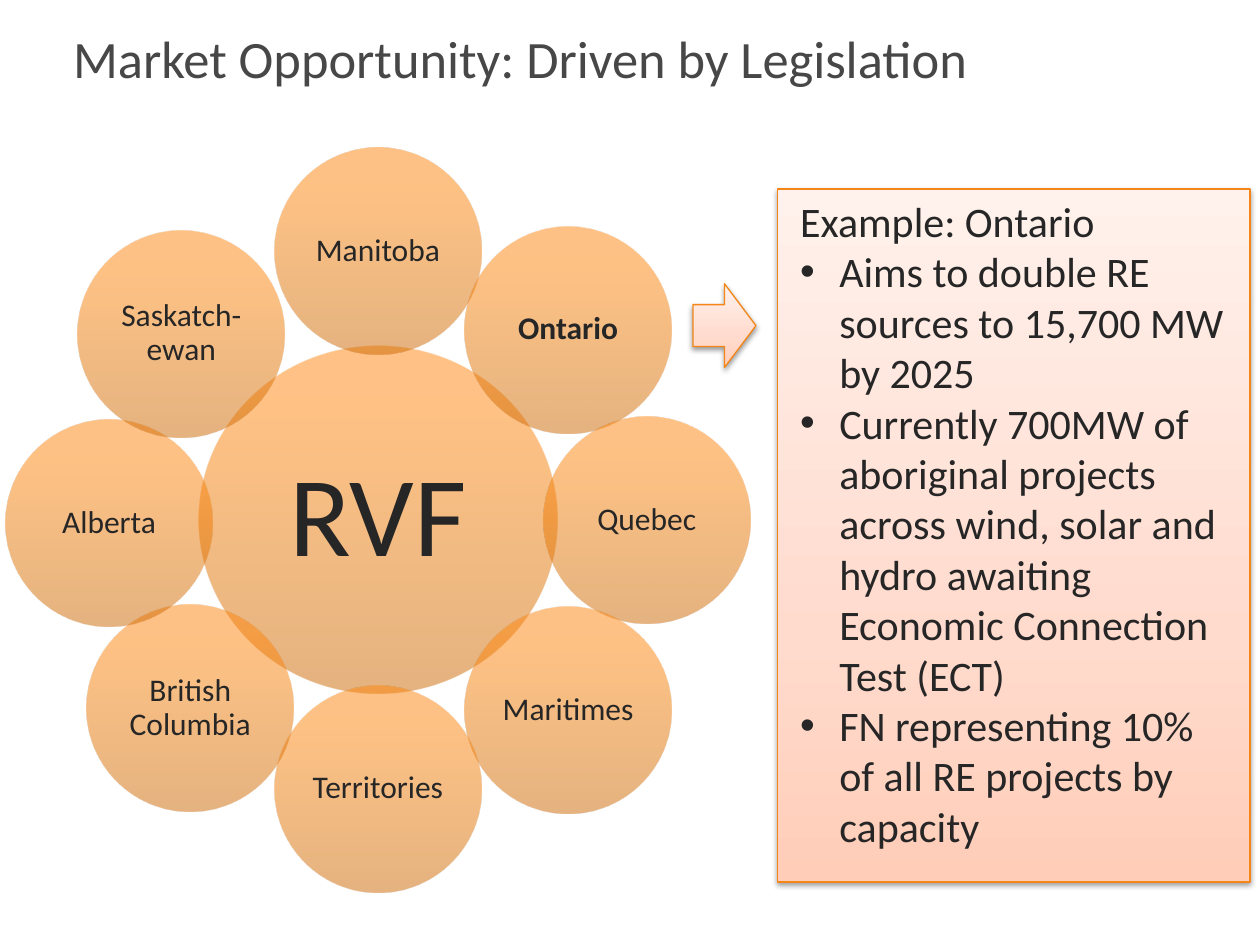
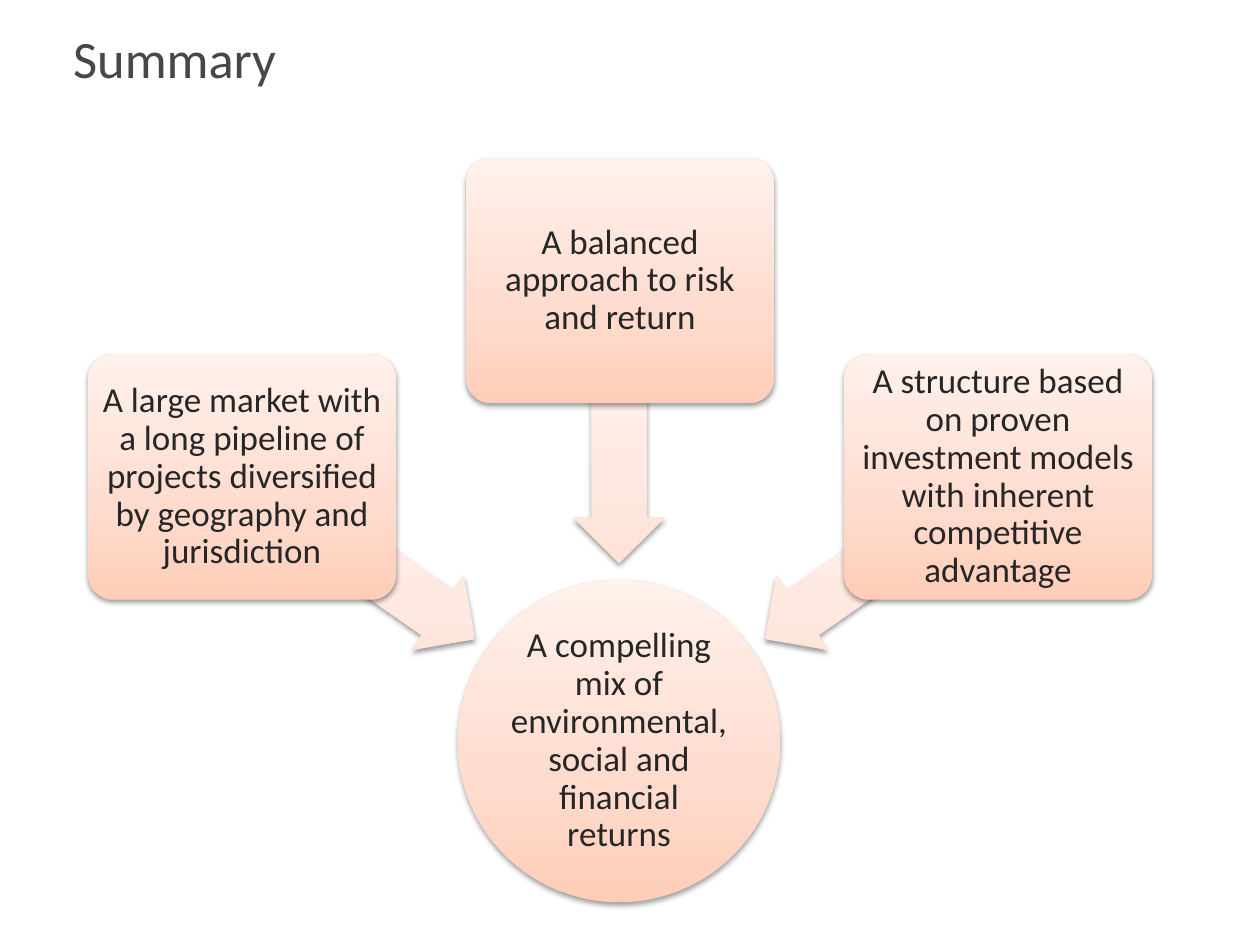
from math import cos, radians, sin

from pptx import Presentation
from pptx.dml.color import RGBColor
from pptx.enum.shapes import MSO_SHAPE
from pptx.enum.text import MSO_ANCHOR, PP_ALIGN
from pptx.oxml import parse_xml
from pptx.oxml.ns import nsdecls, qn
from pptx.util import Cm, Pt

RECTANGLE = MSO_SHAPE.RECTANGLE
ROUNDED = MSO_SHAPE.ROUNDED_RECTANGLE
ELLIPSE = MSO_SHAPE.OVAL
RIGHT_ARROW = MSO_SHAPE.RIGHT_ARROW
LEFT_ARROW = MSO_SHAPE.LEFT_ARROW
LEFT, CENTER = PP_ALIGN.LEFT, PP_ALIGN.CENTER
TOP, MIDDLE = MSO_ANCHOR.TOP, MSO_ANCHOR.MIDDLE

# Gradients run from the bottom up: (position %, colour, opacity %)
PEACH = [(0, "FFCDB8", 100), (35, "FFDBCD", 100), (100, "FFF1EC", 100)]
PALE_PEACH = [(0, "FFE2D7", 100), (35, "FFEAE2", 100), (100, "FFF7F4", 100)]
GLASS_ORANGE = [(0, "CC6600", 50), (80, "FF850A", 50), (100, "FF850C", 50)]


def color(hex_value):
    return RGBColor.from_string(hex_value)


class Deck:
    """Shared style and the slide being filled."""

    font = "Calibri"
    title_color = "474747"
    text_color = "262626"
    outline_color = "F48618"

    def __init__(self):
        self.presentation = Presentation()
        self.presentation.slide_width = Cm(25.4)
        self.presentation.slide_height = Cm(19.05)
        self.slide = None

    def add_slide(self, title):
        layout = self.presentation.slide_layouts[5]
        self.slide = self.presentation.slides.add_slide(layout)
        shape = self.slide.shapes.title
        shape.left, shape.top = Cm(1.22), Cm(0.2)
        shape.width, shape.height = Cm(23.34), Cm(1.9)
        shape.text_frame.text = title
        shape.text_frame.vertical_anchor = MIDDLE
        paragraph = shape.text_frame.paragraphs[0]
        paragraph.alignment = LEFT
        self.format_runs(paragraph, 30, self.title_color)

    def format_runs(self, paragraph, size, hex_value, bold=False):
        for run in paragraph.runs:
            run.font.name = self.font
            run.font.size = Pt(size)
            run.font.bold = bold
            run.font.color.rgb = color(hex_value)

    def add_shape(self, kind, left, top, width, height, gradient,
                  outlined=False, shadow=True):
        shape = self.slide.shapes.add_shape(
            kind, Cm(left), Cm(top), Cm(width), Cm(height))
        self.fill_gradient(shape, gradient)
        if outlined:
            shape.line.color.rgb = color(self.outline_color)
            shape.line.width = Pt(0.75)
        else:
            shape.line.fill.background()
        shape.shadow.inherit = False
        if shadow:
            self.add_shadow(shape)
        return shape

    def fill_gradient(self, shape, gradient):
        stops = "".join(
            f'<a:gs pos="{position * 1000}"><a:srgbClr val="{hex_value}">'
            f'<a:alpha val="{opacity * 1000}"/></a:srgbClr></a:gs>'
            for position, hex_value, opacity in gradient)
        fill = parse_xml(
            f'<a:gradFill {nsdecls("a")} rotWithShape="0">'
            f'<a:gsLst>{stops}</a:gsLst>'
            '<a:lin ang="16200000" scaled="0"/></a:gradFill>')
        shape._element.spPr.find(qn("a:prstGeom")).addnext(fill)

    def add_shadow(self, shape):
        effects = shape._element.spPr.find(qn("a:effectLst"))
        effects.append(parse_xml(
            f'<a:outerShdw {nsdecls("a")} blurRad="{Pt(3.1)}" '
            f'dist="{Pt(1.6)}" dir="5400000" rotWithShape="0">'
            '<a:srgbClr val="000000"><a:alpha val="38000"/></a:srgbClr>'
            '</a:outerShdw>'))

    def set_margins(self, text_frame, horizontal, vertical):
        text_frame.word_wrap = True
        text_frame.margin_left = text_frame.margin_right = Cm(horizontal)
        text_frame.margin_top = text_frame.margin_bottom = Cm(vertical)

    def add_label(self, shape, text, size, margin, bold=False):
        text_frame = shape.text_frame
        self.set_margins(text_frame, margin, margin)
        text_frame.vertical_anchor = MIDDLE
        text_frame.text = text
        paragraph = text_frame.paragraphs[0]
        paragraph.alignment = CENTER
        paragraph.line_spacing = 0.9
        self.format_runs(paragraph, size, self.text_color, bold)

    def add_bulleted_text(self, shape, heading, points, size):
        text_frame = shape.text_frame
        self.set_margins(text_frame, 0.46, 0.13)
        text_frame.vertical_anchor = TOP
        text_frame.text = "\n".join([heading, *points])
        for index, paragraph in enumerate(text_frame.paragraphs):
            if index:
                self.add_bullet(paragraph)
            paragraph.alignment = LEFT
            self.format_runs(paragraph, size, self.text_color)

    def add_bullet(self, paragraph):
        properties = paragraph._p.get_or_add_pPr()
        properties.set("marL", str(Cm(0.79)))
        properties.set("indent", str(-Cm(0.79)))
        properties.append(parse_xml(
            f'<a:buFont {nsdecls("a")} typeface="Arial"/>'))
        properties.append(parse_xml(f'<a:buChar {nsdecls("a")} char="•"/>'))


def build_market_slide(deck):
    deck.add_slide("Market Opportunity: Driven by Legislation")

    # Example panel
    panel = deck.add_shape(RECTANGLE, 15.67, 3.81, 9.53, 13.97, PEACH,
                           outlined=True)
    deck.add_bulleted_text(panel, "Example: Ontario", [
        "Aims to double RE sources to 15,700 MW by 2025",
        "Currently 700MW of aboriginal projects across wind, solar and hydro "
        "awaiting Economic Connection Test (ECT)",
        "FN representing 10% of all RE projects by capacity",
    ], 24)

    # Hub
    center_x, center_y = 7.62, 10.48
    hub_width, hub_height = 7.24, 7.01
    hub = deck.add_shape(ELLIPSE, center_x - hub_width / 2,
                         center_y - hub_height / 2, hub_width, hub_height,
                         GLASS_ORANGE, shadow=False)
    deck.add_label(hub, "RVF", 65, 0.23)

    # Regions clockwise from the top, with small nudges off the ring
    regions = [
        ("Manitoba", 0, 0), ("Ontario", 0, 0), ("Quebec", 0, 0),
        ("Maritimes", 0, 0), ("Territories", 0, 0),
        ("British Columbia", 0.05, -0.03), ("Alberta", 0, 0.06),
        ("Saskatch-ewan", -0.13, 0.08),
    ]
    ring_radius, diameter = 5.42, 4.17
    for index, (name, nudge_x, nudge_y) in enumerate(regions):
        angle = radians(index * 360 / len(regions))
        left = center_x + ring_radius * sin(angle) - diameter / 2 + nudge_x
        top = center_y - ring_radius * cos(angle) - diameter / 2 + nudge_y
        region = deck.add_shape(ELLIPSE, left, top, diameter, diameter,
                                GLASS_ORANGE, shadow=False)
        deck.add_label(region, name, 18, 0.08, bold=name == "Ontario")

    # Arrow from Ontario to the panel
    deck.add_shape(RIGHT_ARROW, 13.97, 5.72, 1.27, 1.69, PEACH, outlined=True)


def build_summary_slide(deck):
    deck.add_slide("Summary")

    # Outcome
    outcome = deck.add_shape(ELLIPSE, 9.23, 11.69, 6.5, 6.5, PEACH)
    deck.add_label(outcome, "A compelling mix of environmental, social and "
                   "financial returns", 20, 0.03)

    # Drivers: text, card top, arrow centre and arrow rotation
    drivers = [
        ("A large market with a long pipeline of projects diversified by "
         "geography and jurisdiction", 7.14, 7.23, 11.24, 215),
        ("A balanced approach to risk and return", 3.18, 12.48, 8.5, 270),
        ("A structure based on proven investment models with inherent "
         "competitive advantage", 7.14, 17.77, 11.24, 325),
    ]
    first_left, pitch = 1.78, 7.62
    arrow_width, arrow_height = 5.72, 1.85
    for index, (text, top, arrow_x, arrow_y, rotation) in enumerate(drivers):
        arrow = deck.add_shape(LEFT_ARROW, arrow_x - arrow_width / 2,
                               arrow_y - arrow_height / 2, arrow_width,
                               arrow_height, PALE_PEACH)
        arrow.adjustments[0] = 0.6
        arrow.rotation = rotation
        card = deck.add_shape(ROUNDED, first_left + index * pitch, top,
                              6.2, 4.95, PEACH)
        card.adjustments[0] = 0.1
        deck.add_label(card, text, 20, 0.1)


def main():
    deck = Deck()
    build_market_slide(deck)
    build_summary_slide(deck)
    deck.presentation.save("out.pptx")


if __name__ == "__main__":
    main()
